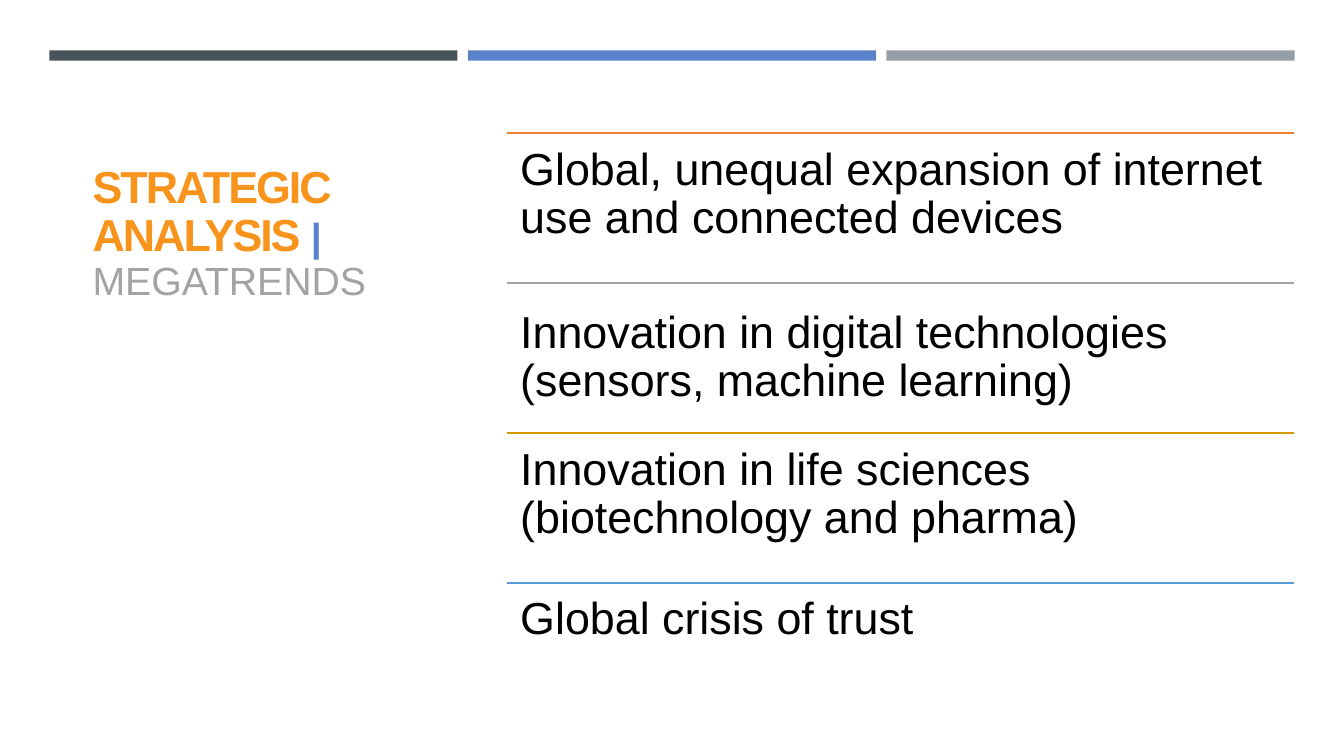
from dataclasses import dataclass

from pptx import Presentation
from pptx.dml.color import RGBColor
from pptx.enum.shapes import MSO_CONNECTOR as Conn, MSO_SHAPE as Shape
from pptx.enum.text import MSO_ANCHOR as Anchor, MSO_AUTO_SIZE as Fit, PP_ALIGN as Align
from pptx.oxml.ns import qn
from pptx.util import Pt
from lxml import etree


@dataclass(frozen=True)
class Theme:
    font: str = "Arial"
    large: float = 32
    small: float = 28
    rule: float = 1.75
    leading: float = 0.9
    slate: str = "465359"
    blue: str = "5A82CB"
    silver: str = "969FA7"
    orange: str = "F8941C"
    grey: str = "A3A3A3"
    rust: str = "ED7D31"
    gold: str = "CF9B00"
    sky: str = "5B9BD5"
    black: str = "000000"


THEME = Theme()

BARS = [THEME.slate, THEME.blue, THEME.silver]
TITLE = [
    ("STRATEGIC ANALYSIS ", THEME.large, THEME.orange, True, -1.5),
    ("| ", THEME.small, THEME.blue, True, 0),
    ("MEGATRENDS", THEME.small, THEME.grey, False, 0),
]
TRENDS = [
    ("Global, unequal expansion of internet use and connected devices",
     THEME.rust, Anchor.TOP),
    ("Innovation in digital technologies (sensors, machine learning)",
     THEME.grey, Anchor.MIDDLE),
    ("Innovation in life sciences (biotechnology and pharma)",
     THEME.gold, Anchor.TOP),
    ("Global crisis of trust", THEME.sky, Anchor.TOP),
]


def style(run, size, color, bold=False):
    font = run.font
    font.name = THEME.font
    font.size = Pt(size)
    font.bold = bold
    font.color.rgb = RGBColor.from_string(color)


def add_bar(slide, left, top, width, height, color):
    bar = slide.shapes.add_shape(
        Shape.RECTANGLE, Pt(left), Pt(top), Pt(width), Pt(height))
    bar.shadow.inherit = False
    bar.fill.solid()
    bar.fill.fore_color.rgb = RGBColor.from_string(color)
    bar.line.fill.background()


def fill_title(slide):
    title = slide.shapes.title
    title.left, title.top = Pt(59), Pt(82)
    title.width, title.height = Pt(256.3), Pt(170.6)
    frame = title.text_frame
    frame.word_wrap = True
    frame.auto_size = Fit.NONE
    frame.vertical_anchor = Anchor.MIDDLE
    para = frame.paragraphs[0]
    para.alignment = Align.LEFT
    para.line_spacing = THEME.leading
    for text, size, color, bold, gap in TITLE:
        run = para.add_run()
        run.text = text
        style(run, size, color, bold)
        run.font._element.set("spc", str(int(gap * 100)))


def add_rule(slide, left, top, width, color):
    rule = slide.shapes.add_connector(
        Conn.STRAIGHT, Pt(left), Pt(top), Pt(left + width), Pt(top))
    rule.line.color.rgb = RGBColor.from_string(color)
    rule.line.width = Pt(THEME.rule)
    etree.SubElement(rule._element.spPr, qn("a:effectLst"))


def add_trend(slide, left, top, width, height, text, anchor):
    box = slide.shapes.add_textbox(Pt(left), Pt(top), Pt(width), Pt(height))
    frame = box.text_frame
    frame.word_wrap = True
    frame.vertical_anchor = anchor
    frame.margin_left = frame.margin_right = Pt(9.6)
    frame.margin_top = frame.margin_bottom = Pt(9.6)
    frame.text = text
    para = frame.paragraphs[0]
    para.line_spacing = THEME.leading
    style(para.runs[0], THEME.large, THEME.black)


def main():
    deck = Presentation()
    deck.slide_width, deck.slide_height = Pt(960), Pt(540)
    slide = deck.slides.add_slide(deck.slide_layouts[5])

    for i, color in enumerate(BARS):
        add_bar(slide, 35.2 + i * 299, 36, 291.6, 7.4, color)

    fill_title(slide)

    left, top, width, pitch = 362, 95, 562.4, 107.1
    for i, (text, color, anchor) in enumerate(TRENDS):
        y = top + i * pitch
        height = 69 if i == len(TRENDS) - 1 else pitch
        add_rule(slide, left, y, width, color)
        add_trend(slide, left, y, width, height, text, anchor)

    deck.save("out.pptx")


if __name__ == "__main__":
    main()
